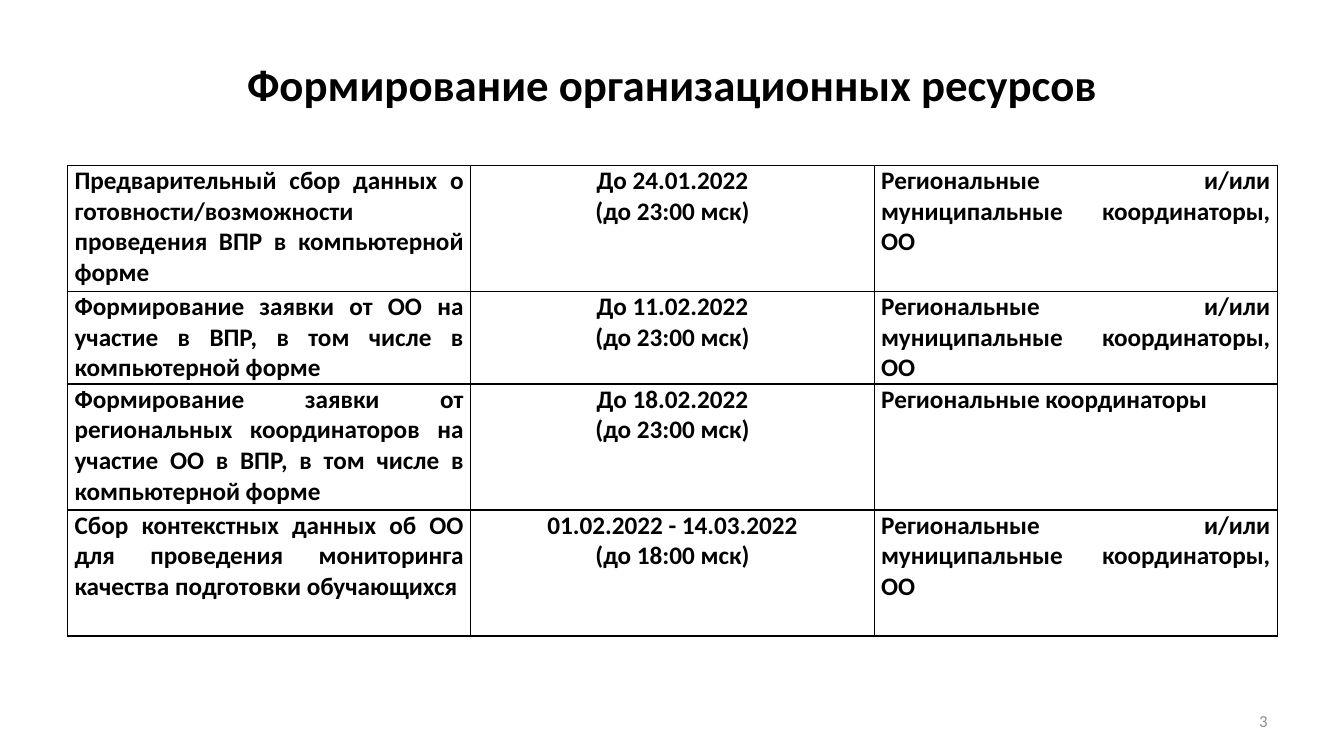
from lxml.etree import SubElement
from pptx import Presentation
from pptx.dml.color import RGBColor
from pptx.enum.text import MSO_ANCHOR as Anchor, PP_ALIGN as Align
from pptx.oxml.ns import qn
from pptx.util import Inches, Pt

BLACK = RGBColor(0x00, 0x00, 0x00)
GRAY = RGBColor(0x8C, 0x8C, 0x8C)
FONT = "Calibri"

ALL_COORDINATORS = "Региональные и/или муниципальные координаторы, ОО"
STAGES = [
    ("Предварительный сбор данных о готовности/возможности проведения ВПР в компьютерной форме",
     ("До 24.01.2022", "(до 23:00 мск)"), ALL_COORDINATORS),
    ("Формирование заявки от ОО на участие в ВПР, в том числе в компьютерной форме",
     ("До 11.02.2022", "(до 23:00 мск)"), ALL_COORDINATORS),
    ("Формирование заявки от региональных координаторов на участие ОО в ВПР, "
     "в том числе в компьютерной форме",
     ("До 18.02.2022", "(до 23:00 мск)"), "Региональные координаторы"),
    ("Сбор контекстных данных об ОО для проведения мониторинга качества подготовки обучающихся",
     ("01.02.2022 - 14.03.2022", "(до 18:00 мск)"), ALL_COORDINATORS),
]
ROW_HEIGHTS = (1.25, 0.92, 1.25, 1.25)


def write_lines(frame, lines, size, color, align, bold=False):
    """Fill a text frame with one paragraph per line."""
    frame.word_wrap = True
    for index, line in enumerate(lines):
        paragraph = frame.paragraphs[0] if index == 0 else frame.add_paragraph()
        paragraph.alignment = align
        run = paragraph.add_run()
        run.text = line
        run.font.name = FONT
        run.font.size = Pt(size)
        run.font.bold = bold
        run.font.color.rgb = color


def outline_cell(cell):
    """Draw a thin black border on all four sides of a cell."""
    properties = cell._tc.get_or_add_tcPr()
    for position, side in enumerate(("a:lnL", "a:lnR", "a:lnT", "a:lnB")):
        border = SubElement(properties, qn(side), w=str(Pt(1)))
        properties.insert(position, border)
        fill = SubElement(border, qn("a:solidFill"))
        SubElement(fill, qn("a:srgbClr"), val=str(BLACK))


def place_heading(slide, left, top, width, height):
    """Position the title placeholder and write the heading."""
    heading = slide.shapes.title
    heading.left, heading.top = Inches(left), Inches(top)
    heading.width, heading.height = Inches(width), Inches(height)
    heading.text_frame.vertical_anchor = Anchor.MIDDLE
    write_lines(heading.text_frame, ["Формирование организационных ресурсов"],
                32, BLACK, Align.CENTER, True)


def place_schedule(slide, left, top, width, height):
    """Lay out the table of stages, deadlines and responsible people."""
    schedule = slide.shapes.add_table(len(STAGES), 3, Inches(left), Inches(top),
                                      Inches(width), Inches(height)).table
    schedule.first_row = schedule.horz_banding = False
    for row, row_height, (task, deadline, people) in zip(schedule.rows, ROW_HEIGHTS, STAGES):
        row.height = Inches(row_height)
        contents = (([task], Align.JUSTIFY), (deadline, Align.CENTER), ([people], Align.JUSTIFY))
        for cell, (lines, align) in zip(row.cells, contents):
            cell.margin_left = cell.margin_right = Inches(0.07)
            cell.margin_top = cell.margin_bottom = 0
            cell.fill.background()
            outline_cell(cell)
            write_lines(cell.text_frame, lines, 18, BLACK, align, True)


def place_page_number(slide, left, top, width, height):
    """Write the page number in the lower right corner."""
    page_number = slide.shapes.add_textbox(Inches(left), Inches(top),
                                           Inches(width), Inches(height))
    page_number.text_frame.vertical_anchor = Anchor.MIDDLE
    write_lines(page_number.text_frame, ["3"], 12, GRAY, Align.RIGHT)


def main():
    """Build and save the slide."""
    presentation = Presentation()
    presentation.slide_width, presentation.slide_height = Inches(13.33), Inches(7.5)
    slide = presentation.slides.add_slide(presentation.slide_layouts[5])
    place_heading(slide, 0.67, 0.3, 12, 1.05)
    place_schedule(slide, 0.67, 1.64, 12, sum(ROW_HEIGHTS))
    place_page_number(slide, 9.56, 6.95, 3.11, 0.4)
    presentation.save("out.pptx")


if __name__ == "__main__":
    main()
